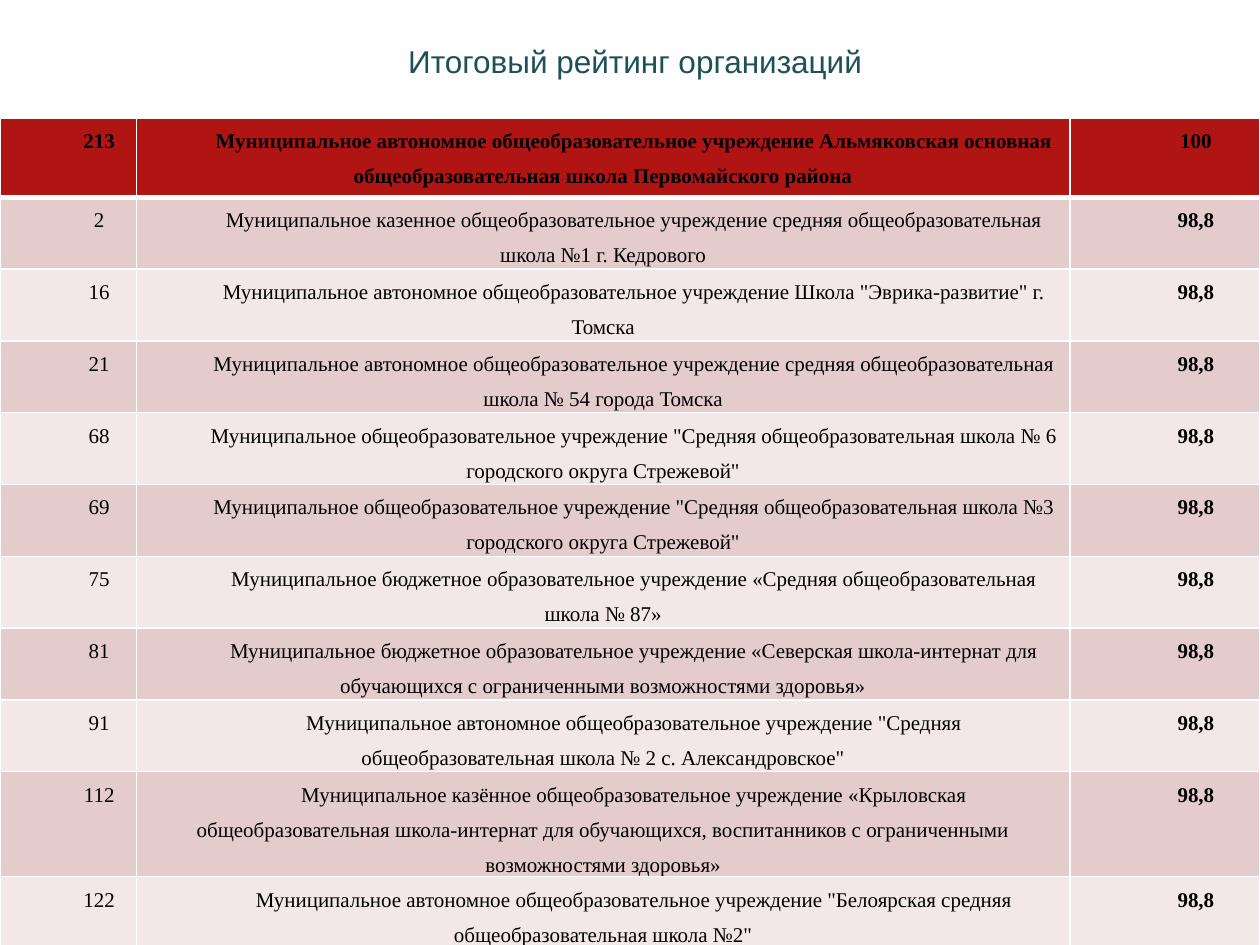
from lxml import etree
from pptx import Presentation
from pptx import util as u
from pptx.dml.color import RGBColor
from pptx.enum import text
from pptx.oxml.ns import qn

COLORS = {
    "title": "1E5155",
    "ink": "000000",
    "border": "FFFFFF",
    "header": "B01513",
    "odd": "E4CCCC",
    "even": "F2E8E7",
}

COLUMN_WIDTHS = [78, 533.4, 108.6]
HEADER_HEIGHT, ROW_HEIGHT = 45.2, 41.04
LINE_PITCH = u.Pt(20)

# Number, organisation, score; the leader is the header row
RATING = [
    ("213", "Муниципальное автономное общеобразовательное учреждение Альмяковская основная "
            "общеобразовательная школа Первомайского района", "100"),
    ("2", "Муниципальное казенное общеобразовательное учреждение средняя "
          "общеобразовательная школа №1 г. Кедрового", "98,8"),
    ("16", "Муниципальное автономное общеобразовательное учреждение Школа "
           "\"Эврика-развитие\" г. Томска", "98,8"),
    ("21", "Муниципальное автономное общеобразовательное учреждение средняя "
           "общеобразовательная школа № 54 города Томска", "98,8"),
    ("68", "Муниципальное общеобразовательное учреждение \"Средняя общеобразовательная "
           "школа № 6 городского округа Стрежевой\"", "98,8"),
    ("69", "Муниципальное общеобразовательное учреждение \"Средняя общеобразовательная "
           "школа №3 городского округа Стрежевой\"", "98,8"),
    ("75", "Муниципальное бюджетное образовательное учреждение «Средняя "
           "общеобразовательная школа № 87»", "98,8"),
    ("81", "Муниципальное бюджетное образовательное учреждение «Северская школа-интернат "
           "для обучающихся с ограниченными возможностями здоровья»", "98,8"),
    ("91", "Муниципальное автономное общеобразовательное учреждение \"Средняя "
           "общеобразовательная школа № 2 с. Александровское\"", "98,8"),
    ("112", "Муниципальное казённое общеобразовательное учреждение «Крыловская "
            "общеобразовательная школа-интернат для обучающихся, воспитанников "
            "c ограниченными возможностями здоровья»", "98,8"),
    ("122", "Муниципальное автономное общеобразовательное учреждение \"Белоярская средняя "
            "общеобразовательная школа №2\"", "98,8"),
]


def write(frame, content, *, font, size, color, bold=False, indent=0, spacing=1.0):
    """Put one centred paragraph into a text frame."""
    para = frame.paragraphs[0]
    para.alignment = text.PP_ALIGN.CENTER
    para.line_spacing = spacing
    if indent:
        properties = para._p.get_or_add_pPr()
        properties.set("marL", "0")
        properties.set("indent", str(u.Pt(indent)))
    span = para.add_run()
    span.text = content
    span.font.name = font
    span.font.size = u.Pt(size)
    span.font.bold = bold
    span.font.color.rgb = RGBColor.from_string(COLORS[color])


class Page:
    title_font = "Arial"
    table_font = "Times New Roman"

    def __init__(self, deck):
        self.slide = deck.slides.add_slide(deck.slide_layouts[6])

    def title(self, content, left, top, width, height):
        box = self.slide.shapes.add_textbox(*map(u.Pt, (left, top, width, height)))
        box.text_frame.word_wrap = True
        box.text_frame.vertical_anchor = text.MSO_ANCHOR.MIDDLE
        write(box.text_frame, content, font=self.title_font, size=18, color="title")

    def borders(self, cell, top, bottom):
        properties = cell._tc.get_or_add_tcPr()
        for side, width in (("L", 1), ("R", 1), ("T", top), ("B", bottom)):
            line = etree.SubElement(properties, qn(f"a:ln{side}"), w=str(u.Pt(width)))
            fill = etree.SubElement(line, qn("a:solidFill"))
            etree.SubElement(fill, qn("a:srgbClr"), val=COLORS["border"])

    def table(self, rows, left, top):
        heights = [HEADER_HEIGHT] + [ROW_HEIGHT] * (len(rows) - 1)
        size = (sum(COLUMN_WIDTHS), sum(heights))
        table = self.slide.shapes.add_table(
            len(rows), len(COLUMN_WIDTHS), *map(u.Pt, (left, top, *size))).table
        for column, width in zip(table.columns, COLUMN_WIDTHS):
            column.width = u.Pt(width)
        for r, values in enumerate(rows):
            table.rows[r].height = u.Pt(heights[r])
            shade = "header" if r == 0 else "odd" if r % 2 else "even"
            for c, value in enumerate(values):
                cell = table.cell(r, c)
                cell.margin_left = cell.margin_right = u.Pt(5)
                cell.margin_top = cell.margin_bottom = 0
                # A thick line parts the header from the rows below
                self.borders(cell, top=3 if r == 1 else 1, bottom=3 if r == 0 else 1)
                cell.fill.solid()
                cell.fill.fore_color.rgb = RGBColor.from_string(COLORS[shade])
                write(cell.text_frame, value, font=self.table_font, size=12, color="ink",
                      bold=r == 0 or c == 2, indent=35.4, spacing=LINE_PITCH)


def main():
    deck = Presentation()
    deck.slide_width, deck.slide_height = u.Pt(720), u.Pt(540)
    page = Page(deck)
    page.title("Итоговый рейтинг организаций", 39, 19.4, 648, 31)
    page.table(RATING, 0, 67.6)
    deck.save("out.pptx")


if __name__ == "__main__":
    main()
